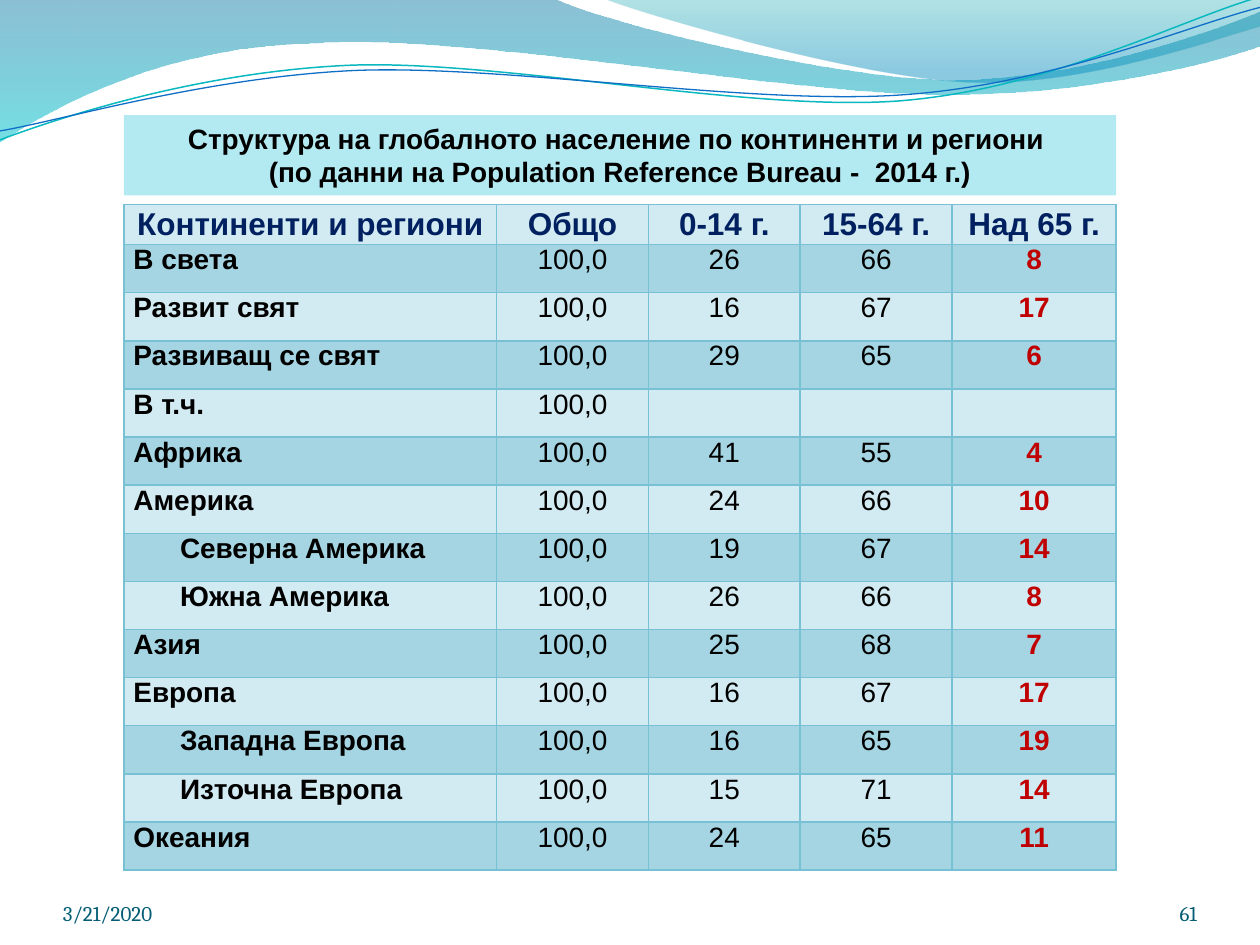
from lxml import etree
from pptx import Presentation
from pptx import util as u
from pptx.dml.color import RGBColor
from pptx.enum import shapes, text
from pptx.oxml.ns import qn

HEADERS = ["Континенти и региони", "Общо", "0-14 г.", "15-64 г.", "Над 65 г."]
REGIONS = [
    ("В света", 26, 66, 8),
    ("Развит свят", 16, 67, 17),
    ("Развиващ се свят", 29, 65, 6),
    ("В т.ч.", "", "", ""),
    ("Африка", 41, 55, 4),
    ("Америка", 24, 66, 10),
    ("Северна Америка", 19, 67, 14),
    ("Южна Америка", 26, 66, 8),
    ("Азия", 25, 68, 7),
    ("Европа", 16, 67, 17),
    ("Западна Европа", 16, 65, 19),
    ("Източна Европа", 15, 71, 14),
    ("Океания", 24, 65, 11),
]
SUBREGIONS = {"Северна Америка", "Южна Америка", "Западна Европа", "Източна Европа"}
TITLE = [
    "Структура на глобалното население по континенти и региони ",
    "(по данни на Population Reference Bureau -  2014 г.)",
]
LEFT_BAND = [
    [(0, 0)],
    [(11.18, -0.03)],
    [(12.09, 0.43), (16.87, 1.6), (19.25, 1.6)],
    [(21.67, 1.6), (24.33, 0.66), (25.4, 0.23)],
    [(25.43, 0.91)],
    [(24.97, 1.12), (22.1, 1.93), (18.95, 1.9)],
    [(15.8, 1.9), (9.7, 0.71), (6.53, 0.86)],
    [(3.28, 0.91), (1.17, 2.11), (-0.03, 2.87)],
]
RIGHT_BAND = [
    [(12.17, -0.03)],
    [(12.93, 0.28), (17.32, 1.57), (19.53, 1.65)],
    [(21.74, 1.75), (24.41, 0.81), (25.4, 0.53)],
    [(25.4, 0)],
]
TEAL_WAVE = [
    [(-0.05, 2.22)],
    [(1.19, 1.82), (4.02, 1.04), (7.05, 1.05)],
    [(10.05, 1.07), (15.02, 2.37), (18.08, 2.29)],
    [(21.13, 2.2), (23.87, 0.91), (25.41, 0.55)],
]
BLUE_WAVE = [
    [(-0.04, 2.04)],
    [(1.16, 1.9), (4.18, 1.15), (7.2, 1.16)],
    [(10.25, 1.19), (15.13, 2.25), (18.19, 2.17)],
    [(21.21, 2.1), (23.93, 1.06), (25.45, 0.75)],
]


def color(value):
    """Turn a hex string into a colour."""
    return RGBColor.from_string(value)


def add_outline(page, segments, close):
    """Draw a freeform whose three-point segments are cubic curves."""
    points = [(u.Cm(x), u.Cm(y)) for segment in segments for x, y in segment]
    builder = page.shapes.build_freeform(*points[0])
    builder.add_line_segments(points[1:], close=close)
    outline = builder.convert_to_shape()
    outline.shadow.inherit = False
    lines = iter(list(outline._element.iter(qn("a:lnTo"))))
    for segment in segments[1:]:
        first, *rest = [next(lines) for _ in segment]
        if rest:
            first.tag = qn("a:cubicBezTo")
        for line in rest:
            first.append(line[0])
            line.getparent().remove(line)
    return outline


def add_band(page, segments, stops):
    """Draw a band with a translucent downward gradient."""
    band = add_outline(page, segments, True)
    band.line.fill.background()
    band.fill.gradient()
    band.fill.gradient_angle = 270
    for stop, (position, value, _) in zip(band.fill.gradient_stops, stops):
        stop.position = position
        stop.color.rgb = color(value)
    tints = band._element.spPr.iter(qn("a:srgbClr"))
    for tint, (_, _, opacity) in zip(tints, stops):
        etree.SubElement(tint, qn("a:alpha"), val=str(opacity * 1000))


def add_wave(page, segments, value, width):
    """Draw a thin open curve, slightly tilted."""
    wave = add_outline(page, segments, False)
    wave.rotation = 357.3
    wave.fill.background()
    wave.line.color.rgb = color(value)
    wave.line.width = u.Pt(width)


def style(paragraph, font, size, value, bold=False, align=text.PP_ALIGN.LEFT):
    """Set the alignment and font of a paragraph."""
    paragraph.alignment = align
    paragraph.font.name = font
    paragraph.font.size = u.Pt(size)
    paragraph.font.color.rgb = color(value)
    paragraph.font.bold = bold


def add_footer(page, words, left, width, align):
    """Add a small text at the foot of the page."""
    box = page.shapes.add_textbox(u.Cm(left), u.Cm(17.65), u.Cm(width), u.Cm(1.02))
    frame = box.text_frame
    frame.word_wrap = True
    frame.vertical_anchor = text.MSO_ANCHOR.BOTTOM
    frame.margin_left = frame.margin_right = frame.margin_top = frame.margin_bottom = 0
    frame.text = words
    style(frame.paragraphs[0], "Cambria", 12, "045D75", align=align)


def add_title(page):
    """Add the filled title bar."""
    bar = page.shapes.add_shape(
        shapes.MSO_SHAPE.RECTANGLE, u.Cm(2.5), u.Cm(2.32), u.Cm(20), u.Cm(1.62)
    )
    bar.shadow.inherit = False
    bar.fill.solid()
    bar.fill.fore_color.rgb = color("B3EAF2")
    bar.line.fill.background()
    bar.text_frame.vertical_anchor = text.MSO_ANCHOR.TOP
    bar.text_frame.text = "\n".join(TITLE)
    for paragraph in bar.text_frame.paragraphs:
        style(paragraph, "Arial", 16, "000000", True, text.PP_ALIGN.CENTER)


def add_borders(cell, value, width):
    """Draw all four borders of a cell."""
    properties = cell._tc.get_or_add_tcPr()
    for index, side in enumerate(("lnL", "lnR", "lnT", "lnB")):
        border = etree.Element(qn(f"a:{side}"), w=str(u.Pt(width)))
        fill = etree.SubElement(border, qn("a:solidFill"))
        etree.SubElement(fill, qn("a:srgbClr"), val=value)
        properties.insert(index, border)


def fill_cell(cell, words, row, column):
    """Write and style one table cell by its place."""
    cell.fill.solid()
    cell.fill.fore_color.rgb = color("A5D5E2" if row % 2 else "D2EAF1")
    cell.margin_left = u.Cm(1.13 if words in SUBREGIONS else 0.19)
    cell.margin_right = u.Cm(0.19)
    cell.margin_top = cell.margin_bottom = 0
    add_borders(cell, "78C0D4", 1)
    if not words:
        return
    cell.text = words
    paragraph = cell.text_frame.paragraphs[0]
    center = text.PP_ALIGN.CENTER
    if row == 0:
        cell.vertical_anchor = text.MSO_ANCHOR.MIDDLE
        style(paragraph, "Arial", 18, "002060", True, center)
    elif column == 0:
        style(paragraph, "Arial", 16, "000000", True)
    elif column == len(HEADERS) - 1:
        style(paragraph, "Arial", 16, "C00000", True, center)
    else:
        style(paragraph, "Arial", 16, "000000", False, center)


def add_population_table(page):
    """Add the table of age shares by region."""
    rows = [HEADERS] + [[name, "100,0", *shares] for name, *shares in REGIONS]
    frame = page.shapes.add_table(
        len(rows), len(HEADERS), u.Cm(2.5), u.Cm(4.12), u.Cm(20), u.Cm(13.4)
    )
    table = frame.table
    table.first_row = table.horz_banding = False
    for column, width in zip(table.columns, (7.51, 3.06, 3.06, 3.06, 3.31)):
        column.width = u.Cm(width)
    for index, values in enumerate(rows):
        table.rows[index].height = u.Cm(0.97 if index else 0.81)
        for place, value in enumerate(values):
            fill_cell(table.cell(index, place), str(value), index, place)


def main():
    """Build the slide and save it."""
    deck = Presentation()
    deck.slide_width, deck.slide_height = u.Cm(25.4), u.Cm(19.05)
    page = deck.slides.add_slide(deck.slide_layouts[6])
    add_band(page, LEFT_BAND, [(0, "0074A1", 45), (1, "00C6CF", 55)])
    add_band(page, RIGHT_BAND, [(0, "00A1A9", 30), (0.8, "008BBF", 45)])
    add_wave(page, TEAL_WAVE, "0AB8BF", 0.85)
    add_wave(page, BLUE_WAVE, "0F6FC6", 0.75)
    add_footer(page, "3/21/2020", 1.27, 5.93, text.PP_ALIGN.LEFT)
    add_footer(page, "61", 22.01, 2.12, text.PP_ALIGN.RIGHT)
    add_population_table(page)
    add_title(page)
    deck.save("out.pptx")


if __name__ == "__main__":
    main()
